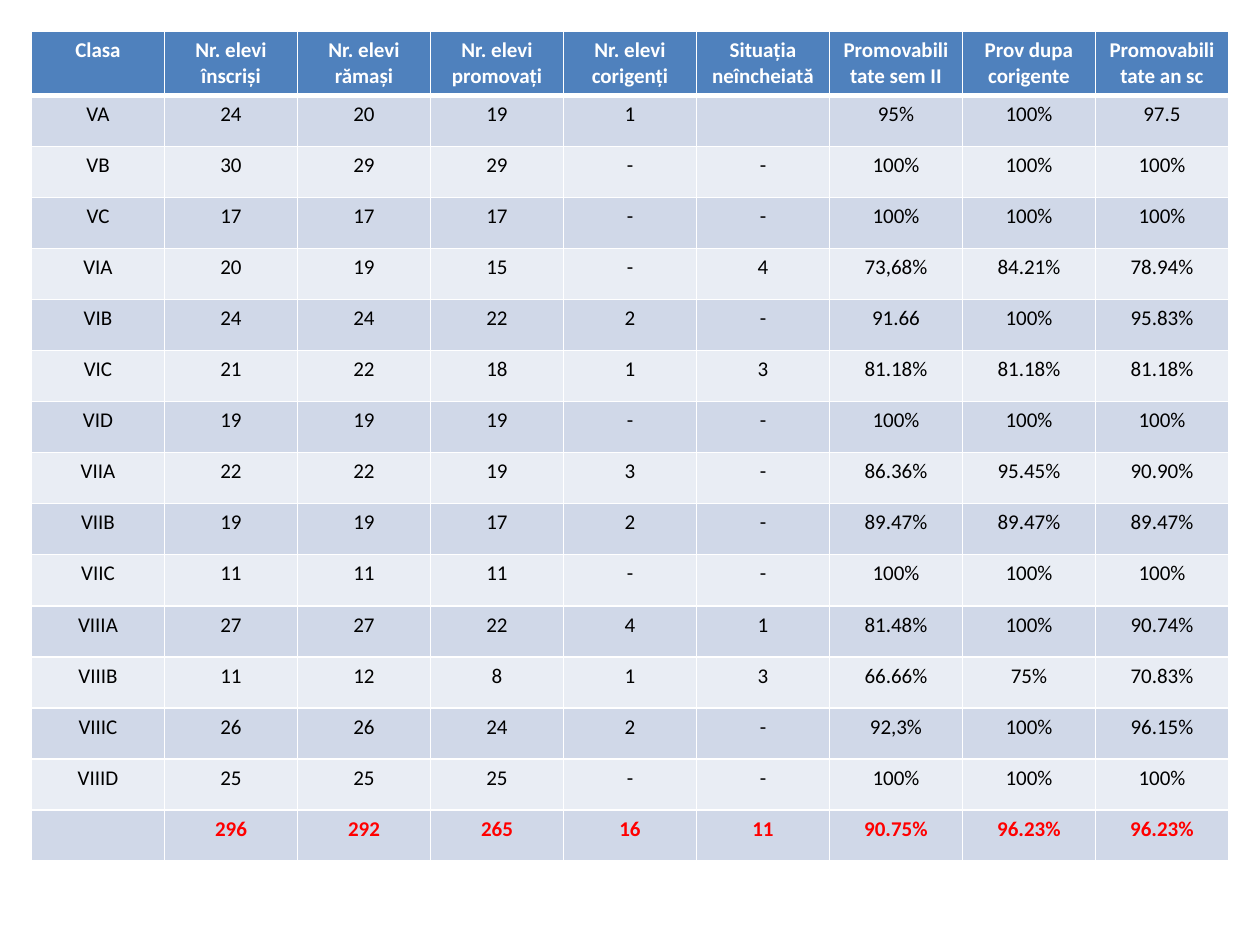
from lxml import etree
from pptx import Presentation
from pptx.dml.color import RGBColor
from pptx.enum.text import PP_ALIGN
from pptx.oxml.ns import qn
from pptx.util import Inches, Pt

CENTER = PP_ALIGN.CENTER
FONT = "Calibri"
WHITE, BLACK, RED = "FFFFFF", "000000", "FF0000"
BLUE, DARK, LIGHT = "4F81BD", "D0D8E8", "E9EDF4"
BLANK = 6

HEADS = ["Clasa", "Nr. elevi înscriși", "Nr. elevi rămași",
         "Nr. elevi promovați", "Nr. elevi corigenți",
         "Situația neîncheiată", "Promovabilitate sem II",
         "Prov dupa corigente", "Promovabilitate an sc"]
CLASSES = [
    ["VA", "24", "20", "19", "1", "", "95%", "100%", "97.5"],
    ["VB", "30", "29", "29", "-", "-", "100%", "100%", "100%"],
    ["VC", "17", "17", "17", "-", "-", "100%", "100%", "100%"],
    ["VIA", "20", "19", "15", "-", "4", "73,68%", "84.21%", "78.94%"],
    ["VIB", "24", "24", "22", "2", "-", "91.66", "100%", "95.83%"],
    ["VIC", "21", "22", "18", "1", "3", "81.18%", "81.18%", "81.18%"],
    ["VID", "19", "19", "19", "-", "-", "100%", "100%", "100%"],
    ["VIIA", "22", "22", "19", "3", "-", "86.36%", "95.45%", "90.90%"],
    ["VIIB", "19", "19", "17", "2", "-", "89.47%", "89.47%", "89.47%"],
    ["VIIC", "11", "11", "11", "-", "-", "100%", "100%", "100%"],
    ["VIIIA", "27", "27", "22", "4", "1", "81.48%", "100%", "90.74%"],
    ["VIIIB", "11", "12", "8", "1", "3", "66.66%", "75%", "70.83%"],
    ["VIIIC", "26", "26", "24", "2", "-", "92,3%", "100%", "96.15%"],
    ["VIIID", "25", "25", "25", "-", "-", "100%", "100%", "100%"],
]
TOTALS = ["", "296", "292", "265", "16", "11", "90.75%", "96.23%", "96.23%"]


def color(code):
    return RGBColor.from_string(code)


def add_edges(cell, top, bottom):
    """Draw white cell borders; top and bottom are widths in points."""
    props = cell._tc.get_or_add_tcPr()
    for side, width in (("L", 1), ("R", 1), ("T", top), ("B", bottom)):
        line = etree.SubElement(props, qn("a:ln" + side), w=str(Pt(width)))
        fill = etree.SubElement(line, qn("a:solidFill"))
        etree.SubElement(fill, qn("a:srgbClr"), val=WHITE)


def fill_cell(cell, text, back, ink, bold):
    cell.fill.solid()
    cell.fill.fore_color.rgb = color(back)
    cell.text = text
    para = cell.text_frame.paragraphs[0]
    para.alignment = CENTER
    font = para.font
    font.name, font.size, font.bold = FONT, Pt(12), bold
    font.color.rgb = color(ink)


def add_results(slide, left, top, width, height):
    rows = [HEADS, *CLASSES, TOTALS]
    last = len(rows) - 1
    table = slide.shapes.add_table(
        len(rows), len(HEADS), left, top, width, height).table
    for col in table.columns:
        col.width = int(width / len(HEADS))
    head = Inches(0.5)
    for r, texts in enumerate(rows):
        table.rows[r].height = head if r == 0 else int((height - head) / last)
        if r == 0:
            look = BLUE, WHITE, True
        else:
            look = (DARK if r % 2 else LIGHT,
                    RED if r == last else BLACK, r == last)
        for c, text in enumerate(texts):
            cell = table.cell(r, c)
            add_edges(cell, 3 if r == 1 else 1, 3 if r == 0 else 1)
            fill_cell(cell, text, *look)


def main():
    deck = Presentation()
    deck.slide_width, deck.slide_height = Inches(10), Inches(7.5)
    slide = deck.slides.add_slide(deck.slide_layouts[BLANK])
    add_results(slide, Inches(0.25), Inches(0.25), Inches(9.5), Inches(6.58))
    deck.save("out.pptx")


if __name__ == "__main__":
    main()
